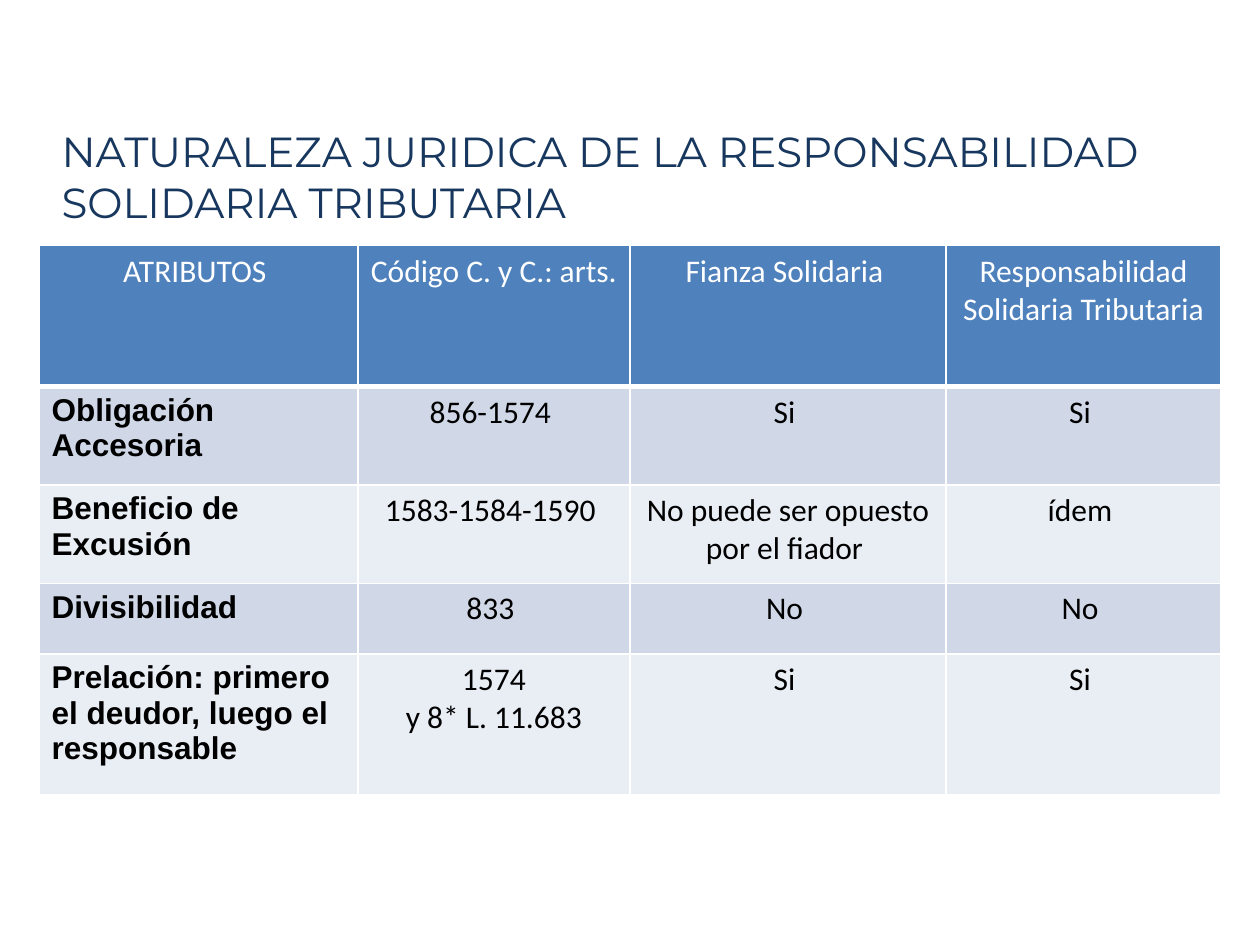
from lxml import etree
from pptx import Presentation
from pptx import util as u
from pptx.dml.color import RGBColor
from pptx.enum import text
from pptx.oxml.ns import qn

COLORS = {"title": "17375E", "header": "4F81BD", "odd": "D0D8E8",
          "even": "E9EDF4", "light": "FFFFFF", "dark": "000000"}
COLUMNS = [2.53, 2.16, 2.51, 2.18]
ROWS = [1.12, 0.78, 0.78, 0.56, 1.12]
CONTENT = [
    ["ATRIBUTOS ", "Código C. y C.: arts. ", "Fianza Solidaria ",
     "Responsabilidad Solidaria Tributaria"],
    ["Obligación Accesoria", "856-1574 ", "Si ", "Si "],
    ["Beneficio de Excusión", "1583-1584-1590 ",
     "No puede ser opuesto por el fiador ", "ídem "],
    ["Divisibilidad", "833 ", "No ", "No "],
    ["Prelación: primero el deudor, luego el responsable",
     "1574\ny 8* L. 11.683", "Si ", "Si "],
]


def set_font(para, name, size, color, bold=False):
    """Give one paragraph its font."""
    font = para.font
    font.name, font.size, font.bold = name, u.Pt(size), bold
    font.color.rgb = RGBColor.from_string(COLORS[color])


def add_title(page, left, top, width, height):
    """Place the slide heading in the given box."""
    box = page.shapes.add_textbox(*map(u.Inches, (left, top, width, height)))
    frame = box.text_frame
    frame.word_wrap = True
    frame.vertical_anchor = text.MSO_ANCHOR.MIDDLE
    frame.text = "NATURALEZA JURIDICA DE LA RESPONSABILIDAD SOLIDARIA TRIBUTARIA"
    set_font(frame.paragraphs[0], "Montserrat", 24, "title")


def set_borders(cell, bottom):
    """Draw white cell borders, with the given weight at the bottom."""
    properties = cell._tc.get_or_add_tcPr()
    for side, weight in (("L", 1), ("R", 1), ("T", 1), ("B", bottom)):
        line = etree.SubElement(properties, qn(f"a:ln{side}"), w=str(u.Pt(weight)))
        fill = etree.SubElement(line, qn("a:solidFill"))
        etree.SubElement(fill, qn("a:srgbClr"), val=COLORS["light"])


def style_cell(cell, row, column):
    """Set fill, borders and text style by the position of the cell."""
    header, label = row == 0, row > 0 and column == 0
    band = "header" if header else "odd" if row % 2 else "even"
    set_borders(cell, 3 if header else 1)
    cell.fill.solid()
    cell.fill.fore_color.rgb = RGBColor.from_string(COLORS[band])
    for para in cell.text_frame.paragraphs:
        para.alignment = text.PP_ALIGN.LEFT if label else text.PP_ALIGN.CENTER
        set_font(para, "Arial" if label else "Calibri", 18,
                 "light" if header else "dark", label)


def add_comparison(page, left, top):
    """Place the table of attributes at the given corner."""
    size = (left, top, sum(COLUMNS), sum(ROWS))
    table = page.shapes.add_table(
        len(ROWS), len(COLUMNS), *map(u.Inches, size)).table
    for column, width in zip(table.columns, COLUMNS):
        column.width = u.Inches(width)
    for row, height in zip(table.rows, ROWS):
        row.height = u.Inches(height)
    for row, words in enumerate(CONTENT):
        for column, wording in enumerate(words):
            cell = table.cell(row, column)
            cell.text = wording
            style_cell(cell, row, column)


def main():
    """Build and save the slide."""
    deck = Presentation()
    deck.slide_width, deck.slide_height = u.Inches(10), u.Inches(7.5)
    page = deck.slides.add_slide(deck.slide_layouts[6])
    add_title(page, 0.39, 0.62, 8.75, 1.56)
    add_comparison(page, 0.31, 1.95)
    deck.save("out.pptx")


if __name__ == "__main__":
    main()
